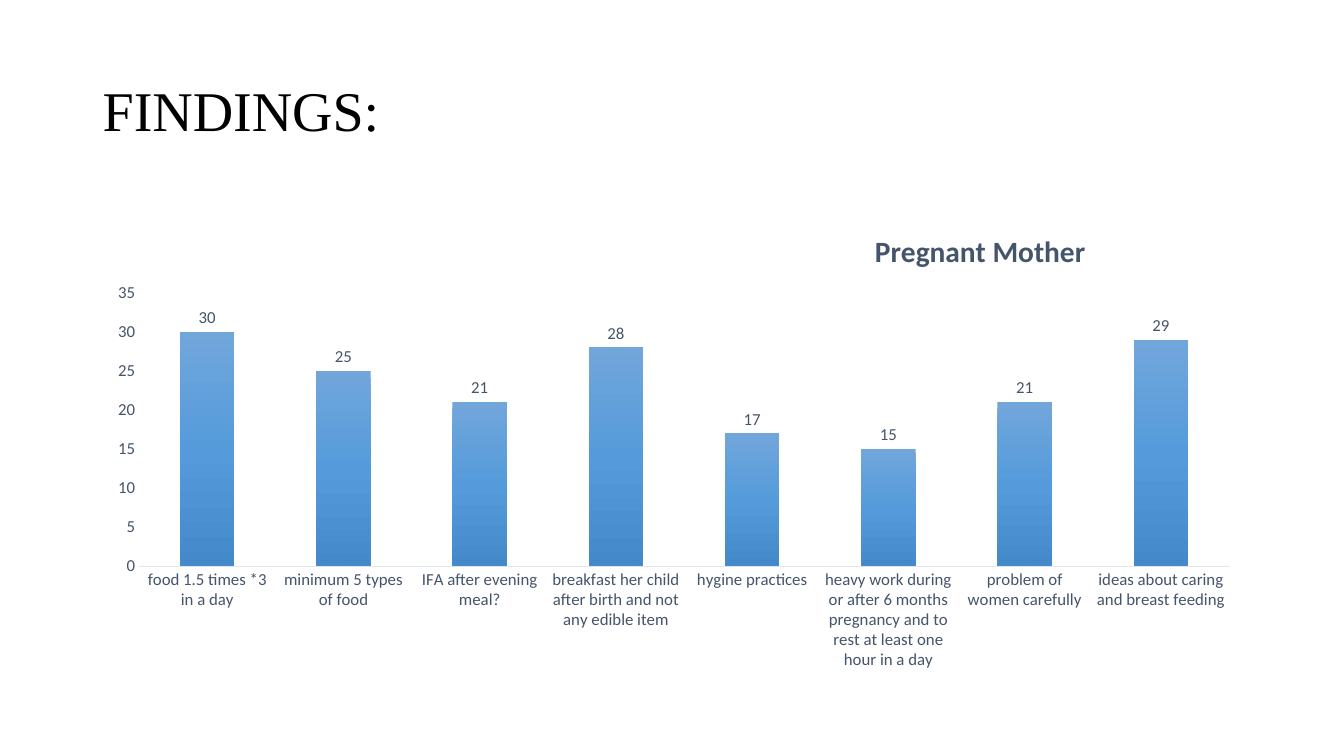
from pptx import Presentation
from pptx.chart.data import CategoryChartData
from pptx.dml.color import RGBColor
from pptx.enum.chart import XL_CHART_TYPE, XL_LABEL_POSITION, XL_TICK_MARK
from pptx.enum.text import MSO_ANCHOR
from pptx.oxml import parse_xml
from pptx.oxml.ns import nsdecls, qn
from pptx.util import Inches, Pt

BLACK = RGBColor(0x00, 0x00, 0x00)
SLATE = RGBColor(0x44, 0x54, 0x6A)
PALE_LINE = RGBColor(0xE0, 0xE5, 0xEB)
BAR_STOPS = (
    (0, RGBColor(0x71, 0xA6, 0xDB)),
    (50, RGBColor(0x55, 0x9B, 0xDB)),
    (100, RGBColor(0x44, 0x8A, 0xCA)),
)

HEADING_FORMAT = {"name": "Times New Roman", "size": Pt(40)}
CHART_TITLE_FORMAT = {"name": "Calibri", "size": Pt(21), "bold": True}
CHART_TEXT_FORMAT = {"name": "Calibri", "size": Pt(12), "bold": False}

FINDINGS = {
    "food 1.5 times *3 in a day": 30,
    "minimum 5 types of food": 25,
    "IFA after evening meal?": 21,
    "breakfast her child after birth and not any edible item": 28,
    "hygine practices": 17,
    "heavy work during or after 6 months pregnancy and to rest at least one hour in a day": 15,
    "problem of women carefully": 21,
    "ideas about caring and breast feeding": 29,
}


def set_font(font, values, color):
    for name, value in values.items():
        setattr(font, name, value)
    font.color.rgb = color


def set_layout(parent, after, target=None, **shares):
    """Place a chart part by shares of the chart's size."""
    for old in parent.findall(qn("c:layout")):
        parent.remove(old)
    parts = f'<c:layoutTarget val="{target}"/>' if target else ""
    parts += '<c:xMode val="edge"/><c:yMode val="edge"/>'
    parts += "".join(f'<c:{key} val="{share}"/>' for key, share in shares.items())
    layout = parse_xml(
        f'<c:layout {nsdecls("c")}><c:manualLayout>{parts}</c:manualLayout></c:layout>')
    parent.insert(after, layout)


def fill_bars(series):
    """Give the bars a vertical gradient, light at the top."""
    stops = "".join(
        f'<a:gs pos="{share * 1000}"><a:srgbClr val="{color}"/></a:gs>'
        for share, color in BAR_STOPS)
    gradient = parse_xml(
        f'<a:gradFill {nsdecls("a")} rotWithShape="1"><a:gsLst>{stops}</a:gsLst>'
        '<a:lin ang="5400000" scaled="0"/></a:gradFill>')
    series.format.line.fill.background()
    properties = series.format.line._ln.getparent()
    properties.insert(0, gradient)


def add_heading(slide, left, top, width, height):
    box = slide.shapes.add_textbox(left, top, width, height)
    frame = box.text_frame
    frame.word_wrap = True
    frame.vertical_anchor = MSO_ANCHOR.MIDDLE
    para = frame.paragraphs[0]
    para.line_spacing = 0.9
    span = para.add_run()
    span.text = "FINDINGS:"
    set_font(span.font, HEADING_FORMAT, BLACK)


def add_findings_chart(slide, left, top, width, height):
    data = CategoryChartData()
    data.categories = list(FINDINGS)
    data.add_series("Series 1", list(FINDINGS.values()))
    chart = slide.shapes.add_chart(
        XL_CHART_TYPE.COLUMN_CLUSTERED, left, top, width, height, data).chart
    chart.has_legend = False
    set_font(chart.font, {"name": "Calibri", "size": Pt(10)}, BLACK)

    # Chart title, right of the centre
    chart.has_title = True
    para = chart.chart_title.text_frame.paragraphs[0]
    span = para.add_run()
    span.text = "Pregnant Mother"
    set_font(span.font, CHART_TITLE_FORMAT, SLATE)
    set_layout(chart.chart_title._element, 1, x=0.67, y=0.05)

    # Axes
    for axis in (chart.category_axis, chart.value_axis):
        axis.has_major_gridlines = False
        axis.major_tick_mark = axis.minor_tick_mark = XL_TICK_MARK.NONE
        set_font(axis.tick_labels.font, CHART_TEXT_FORMAT, SLATE)
    axis_line = chart.category_axis.format.line
    axis_line.color.rgb = PALE_LINE
    axis_line.width = Pt(0.75)
    values = chart.value_axis
    values.format.line.fill.background()
    values.minimum_scale, values.maximum_scale, values.major_unit = 0, 35, 5

    # Columns and their labels
    plot = chart.plots[0]
    plot.gap_width = 150
    plot.vary_by_categories = False
    fill_bars(plot.series[0])
    labels = plot.series[0].data_labels
    labels.show_value = True
    labels.position = XL_LABEL_POSITION.OUTSIDE_END
    set_font(labels.font, CHART_TEXT_FORMAT, SLATE)
    plot_area = chart._chartSpace.chart.plotArea
    set_layout(plot_area, 0, "inner", x=0.04, y=0.19, w=0.94, h=0.57)


def main():
    deck = Presentation()
    deck.slide_width, deck.slide_height = Inches(13.33), Inches(7.5)
    slide = deck.slides.add_slide(deck.slide_layouts[6])
    left, width = Inches(0.92), Inches(11.5)
    add_heading(slide, left, Inches(0.4), width, Inches(1.45))
    add_findings_chart(slide, left, Inches(2), width, Inches(4.76))
    deck.save("out.pptx")


if __name__ == "__main__":
    main()
